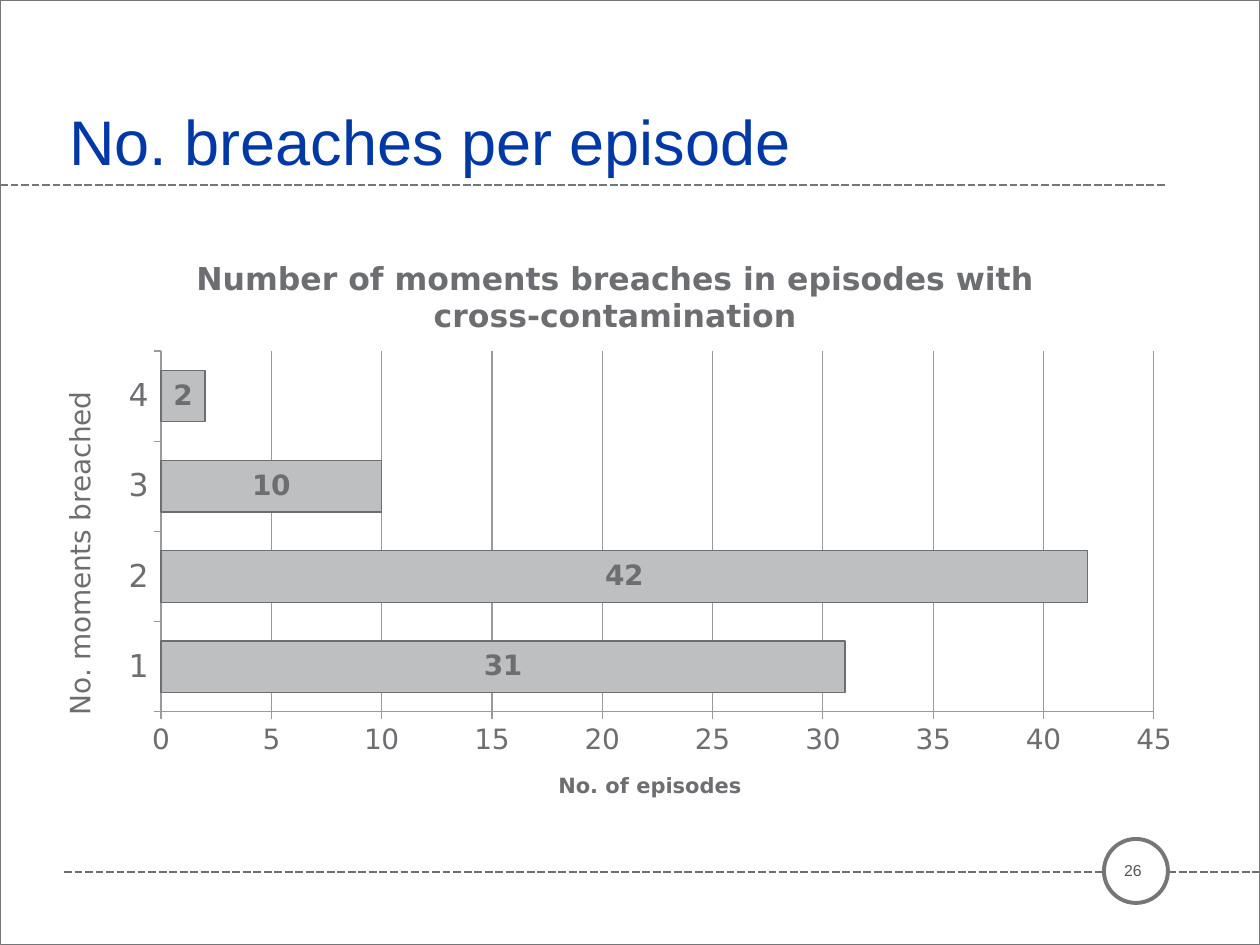
from pptx import Presentation
from pptx.chart.data import CategoryChartData
from pptx.dml.color import RGBColor
from pptx.enum.chart import XL_CHART_TYPE as Kind, XL_LABEL_POSITION as Pos, XL_TICK_MARK as Tick
from pptx.enum.dml import MSO_LINE as Dash
from pptx.enum.shapes import MSO_CONNECTOR as Link, MSO_SHAPE as Shape
from pptx.enum.text import MSO_ANCHOR as Anchor, PP_ALIGN as Align
from pptx.oxml import parse_xml
from pptx.oxml.ns import nsdecls, qn
from pptx.util import Pt

PX = 914400 // 126
BLUE = RGBColor(0x00, 0x39, 0xA6)
RULE = RGBColor(0x74, 0x76, 0x78)
GREY = RGBColor(0x6D, 0x6E, 0x71)
DARK = RGBColor(0x52, 0x53, 0x55)
PALE = RGBColor(0xBE, 0xBF, 0xC1)
GRID = RGBColor(0x99, 0x9A, 0x9C)
WHITE = RGBColor(0xFF, 0xFF, 0xFF)

TITLE = "No. breaches per episode"
PAGE = "26"
HEAD = "Number of moments breaches in episodes with cross-contamination"
DATA = {"1": 31, "2": 42, "3": 10, "4": 2}
RULES = [(0, 1166, 185, RULE), (64, 1260, 872, GREY)]  # left, right, y, colour
CHART = (35, 234, 1160, 592)
PLOT = (161, 351, 993, 361)


def emu(*nums):
    return [n * PX for n in nums]


def style(font, **vals):
    for key, val in vals.items():
        if key == "color":
            font.color.rgb = val
        else:
            setattr(font, key, val)


def stroke(line, color, width):
    line.color.rgb = color
    line.width = Pt(width)


def add_rule(left, right, y, color):
    rule = shapes.add_connector(Link.STRAIGHT, *emu(left, y, right, y))
    stroke(rule.line, color, 1.5)
    rule.line.dash_style = Dash.SQUARE_DOT
    rule._element.spPr.append(parse_xml(f"<a:effectLst {nsdecls('a')}/>"))


def add_frame(kind, box, width, fill=None):
    frame = shapes.add_shape(kind, *emu(*box))
    frame.shadow.inherit = False
    if fill is None:
        frame.fill.background()
    else:
        frame.fill.solid()
        frame.fill.fore_color.rgb = fill
    stroke(frame.line, RULE, width)


def add_text(box, text, anchor, align, **font):
    frame = shapes.add_textbox(*emu(*box)).text_frame
    frame.word_wrap = True
    frame.vertical_anchor = anchor
    para = frame.paragraphs[0]
    para.alignment = align
    run = para.add_run()
    run.text = text
    style(run.font, name="Arial", **font)


def set_title(owner, text, size, bold):
    """Give a chart or an axis its title."""
    title = owner.chart_title if hasattr(owner, "chart_title") else owner.axis_title
    run = title.text_frame.paragraphs[0].add_run()
    run.text = text
    style(run.font, name="DejaVu Sans", size=Pt(size), bold=bold, color=GREY)


def set_plot(chart):
    """Fix the inner plot area as fractions of the chart."""
    left, top, wide, high = CHART
    x, y, w, h = PLOT
    parts = dict(x=(x - left) / wide, y=(y - top) / high, w=w / wide, h=h / high)
    marks = '<c:layoutTarget val="inner"/><c:xMode val="edge"/><c:yMode val="edge"/>'
    marks += "".join(f'<c:{key} val="{val:.4f}"/>' for key, val in parts.items())
    area = chart._chartSpace.chart.plotArea
    for old in area.findall(qn("c:layout")):
        area.remove(old)
    area.insert(0, parse_xml(
        f"<c:layout {nsdecls('c')}><c:manualLayout>{marks}</c:manualLayout></c:layout>"))


def add_bars():
    data = CategoryChartData()
    data.categories = list(DATA)
    data.add_series("Series 1", list(DATA.values()))
    chart = shapes.add_chart(Kind.BAR_CLUSTERED, *emu(*CHART), data).chart
    chart.has_legend = False
    style(chart.font, name="DejaVu Sans", size=Pt(10), color=GREY)
    set_title(chart, HEAD, 18, True)
    chart.chart_title.include_in_layout = False
    set_plot(chart)

    cats, vals = chart.category_axis, chart.value_axis
    for axis, text, size, bold, tick in [(cats, "No. moments breached", 16, False, 18),
                                         (vals, "No. of episodes", 12, True, 16)]:
        set_title(axis, text, size, bold)
        axis.major_tick_mark = Tick.OUTSIDE
        axis.minor_tick_mark = Tick.NONE
        style(axis.tick_labels.font, name="DejaVu Sans", size=Pt(tick), color=GREY)
        stroke(axis.format.line, GRID, 0.75)
    cats.has_major_gridlines = False
    vals.has_major_gridlines = True
    stroke(vals.major_gridlines.format.line, GRID, 0.75)
    for key, val in dict(minimum_scale=0, maximum_scale=45, major_unit=5).items():
        setattr(vals, key, val)

    plot = chart.plots[0]
    plot.gap_width = 75
    plot.vary_by_categories = False
    bars = plot.series[0]
    bars.format.fill.solid()
    bars.format.fill.fore_color.rgb = PALE
    stroke(bars.format.line, GREY, 0.75)
    labels = bars.data_labels
    labels.show_value = True
    labels.position = Pos.CENTER
    style(labels.font, name="DejaVu Sans", size=Pt(16), bold=True, color=GREY)


deck = Presentation()
deck.slide_width, deck.slide_height = emu(1260, 945)
shapes = deck.slides.add_slide(deck.slide_layouts[6]).shapes

for rule in RULES:
    add_rule(*rule)
add_frame(Shape.OVAL, (1104, 839, 64, 64), 2.25, WHITE)
add_frame(Shape.RECTANGLE, (0, 0, 1260, 945), 0.5)
add_text((57, 67, 960, 117), TITLE, Anchor.BOTTOM, Align.LEFT, size=Pt(36), color=BLUE)
add_text((1106, 842, 54, 57), PAGE, Anchor.MIDDLE, Align.CENTER, size=Pt(9), color=DARK)
add_bars()
deck.save("out.pptx")
